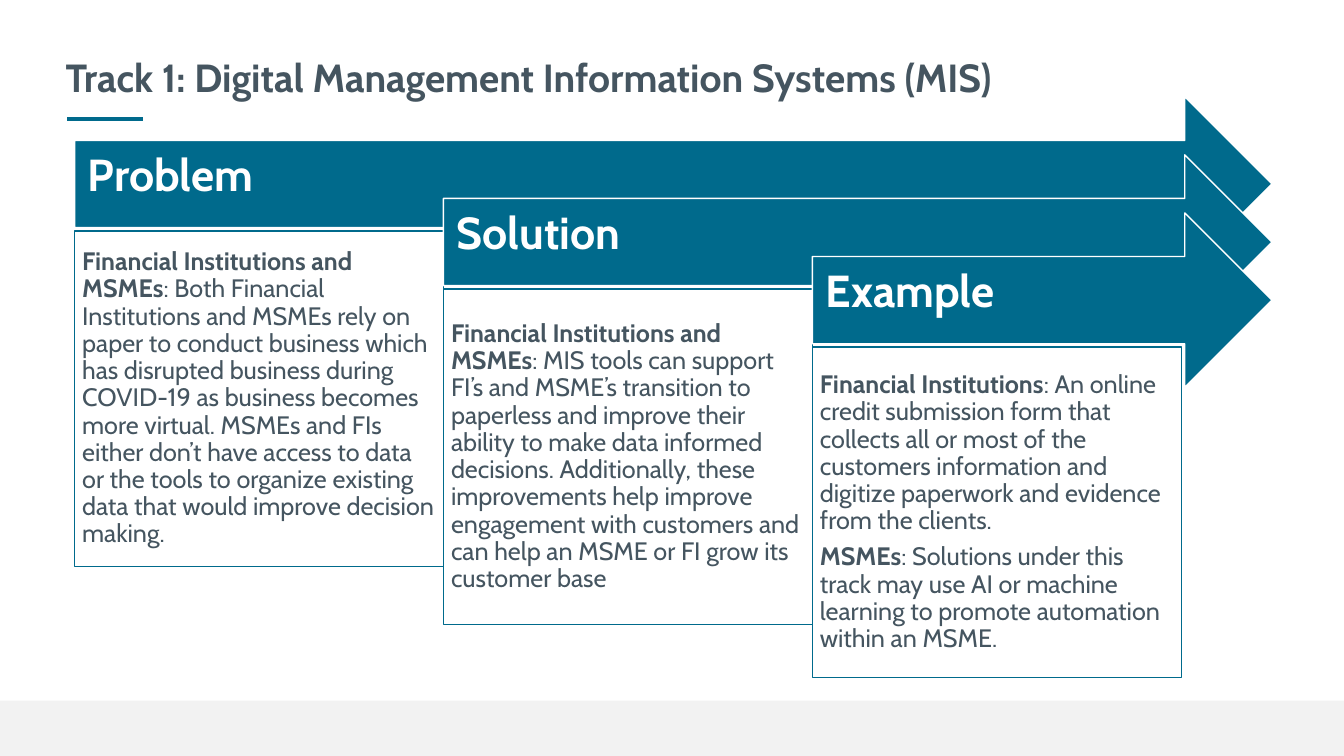
from dataclasses import dataclass

from lxml import etree
from pptx import Presentation
from pptx.dml.color import RGBColor
from pptx.enum.shapes import MSO_CONNECTOR, MSO_SHAPE
from pptx.enum.text import MSO_ANCHOR, MSO_AUTO_SIZE, PP_ALIGN
from pptx.oxml.ns import qn
from pptx.shapes.autoshape import Shape
from pptx.slide import Slide
from pptx.text.text import TextFrame
from pptx.util import Pt

RECTANGLE = MSO_SHAPE.RECTANGLE
RIGHT_ARROW = MSO_SHAPE.RIGHT_ARROW
STRAIGHT = MSO_CONNECTOR.STRAIGHT
MIDDLE = MSO_ANCHOR.MIDDLE
LEFT = PP_ALIGN.LEFT
NO_AUTOFIT = MSO_AUTO_SIZE.NONE


@dataclass(frozen=True)
class Theme:
    font: str = "Cabin"
    ink: RGBColor = RGBColor(0x45, 0x55, 0x60)
    teal: RGBColor = RGBColor(0x00, 0x6A, 0x8C)
    white: RGBColor = RGBColor(0xFF, 0xFF, 0xFF)
    band: RGBColor = RGBColor(0xF2, 0xF2, 0xF2)
    title_size: float = 28
    heading_size: float = 32
    body_size: float = 18
    line_spacing: float = 0.9
    gap_ratio: float = 0.35


@dataclass(frozen=True)
class Box:
    left: float
    top: float
    width: float
    height: float


@dataclass(frozen=True)
class Passage:
    lead: str
    detail: str


@dataclass(frozen=True)
class Stage:
    heading: str
    passages: list[Passage]
    body_height: float = 239.8


THEME = Theme()
STAGE_LEFT, STAGE_TOP = 53.28, 69.1
STEP_X, STEP_Y = 263.5, 41.5
ARROW_RIGHT, ARROW_HEIGHT = 908.6, 124.6
BODY_OFFSET = 95.8

STAGES = [
    Stage("Problem", [Passage(
        "Financial Institutions and MSMEs",
        ": Both Financial Institutions and MSMEs rely on paper to conduct business "
        "which has disrupted business during COVID-19 as business becomes more "
        "virtual. MSMEs and FIs either don’t have access to data or the tools to "
        "organize existing data that would improve decision making.")]),
    Stage("Solution", [Passage(
        "Financial Institutions and MSMEs",
        ": MIS tools can support FI’s and MSME’s transition to paperless and "
        "improve their ability to make data informed decisions. Additionally, these "
        "improvements help improve engagement with customers and can help an MSME "
        "or FI grow its customer base")]),
    Stage("Example", [
        Passage(
            "Financial Institutions",
            ": An online credit submission form that collects all or most of the "
            "customers information and digitize paperwork and evidence from the "
            "clients."),
        Passage(
            "MSMEs",
            ": Solutions under this track may use AI or machine learning to promote "
            "automation within an MSME.")], 236.2),
]


def place(box: Box) -> tuple[Pt, Pt, Pt, Pt]:
    return Pt(box.left), Pt(box.top), Pt(box.width), Pt(box.height)


def add_block(slide: Slide, kind: MSO_SHAPE, box: Box, fill: RGBColor,
              outline: RGBColor | None = None) -> Shape:
    block = slide.shapes.add_shape(kind, *place(box))
    block.shadow.inherit = False
    block.fill.solid()
    block.fill.fore_color.rgb = fill
    if outline is None:
        block.line.fill.background()
    else:
        block.line.color.rgb = outline
        block.line.width = Pt(1)
    return block


def set_frame(frame: TextFrame, left: float, top: float, right: float,
              bottom: float) -> None:
    frame.word_wrap = True
    frame.auto_size = NO_AUTOFIT
    frame.vertical_anchor = MIDDLE
    frame.margin_left, frame.margin_top = Pt(left), Pt(top)
    frame.margin_right, frame.margin_bottom = Pt(right), Pt(bottom)


def write(frame: TextFrame, passages: list[Passage], size: float,
          color: RGBColor) -> None:
    for index, passage in enumerate(passages):
        paragraph = frame.add_paragraph() if index else frame.paragraphs[0]
        paragraph.alignment = LEFT
        paragraph.line_spacing = THEME.line_spacing
        paragraph.space_before = Pt(0)
        paragraph.space_after = Pt(size * THEME.gap_ratio)
        for words, bold in ((passage.lead, True), (passage.detail, False)):
            if words:
                run = paragraph.add_run()
                run.text = words
                run.font.name = THEME.font
                run.font.size = Pt(size)
                run.font.bold = bold
                run.font.color.rgb = color


def add_title(slide: Slide, words: str) -> None:
    title = slide.shapes.title
    title.left, title.top, title.width, title.height = place(Box(39.6, 37.4, 872, 38.9))
    set_frame(title.text_frame, 7.2, 3.6, 7.2, 3.6)
    write(title.text_frame, [Passage(words, "")], THEME.title_size, THEME.ink)
    title.text_frame.paragraphs[0].space_after = Pt(0)


def add_accent(slide: Slide) -> None:
    accent = slide.shapes.add_connector(STRAIGHT, Pt(48.2), Pt(85), Pt(102.2), Pt(85))
    accent.line.color.rgb = THEME.teal
    accent.line.width = Pt(3)
    etree.SubElement(accent.element.spPr, qn("a:effectLst"))


def add_stage(slide: Slide, index: int, stage: Stage) -> None:
    left = STAGE_LEFT + index * STEP_X
    top = STAGE_TOP + index * STEP_Y
    width = ARROW_RIGHT - left
    quarter = ARROW_HEIGHT / 4
    add_block(slide, RIGHT_ARROW, Box(left, top, width, ARROW_HEIGHT),
              THEME.teal, THEME.white)

    heading_box = Box(left, top + quarter, width - quarter, ARROW_HEIGHT / 2)
    heading = slide.shapes.add_textbox(*place(heading_box)).text_frame
    set_frame(heading, 9.4, 9.4, 20, 19.4)
    write(heading, [Passage(stage.heading, "")], THEME.heading_size, THEME.white)

    body_box = Box(left, top + BODY_OFFSET, STEP_X, stage.body_height)
    body = add_block(slide, RECTANGLE, body_box, THEME.white, THEME.teal).text_frame
    set_frame(body, 5.4, 5.4, 5.4, 5.4)
    write(body, stage.passages, THEME.body_size, THEME.ink)


def main() -> None:
    deck = Presentation()
    deck.slide_width, deck.slide_height = Pt(960), Pt(540)
    slide = deck.slides.add_slide(deck.slide_layouts[5])
    add_block(slide, RECTANGLE, Box(0, 500.4, 960, 39.6), THEME.band)
    add_accent(slide)
    add_title(slide, "Track 1: Digital Management Information Systems (MIS)")
    for index, stage in enumerate(STAGES):
        add_stage(slide, index, stage)
    deck.save("out.pptx")


if __name__ == "__main__":
    main()
